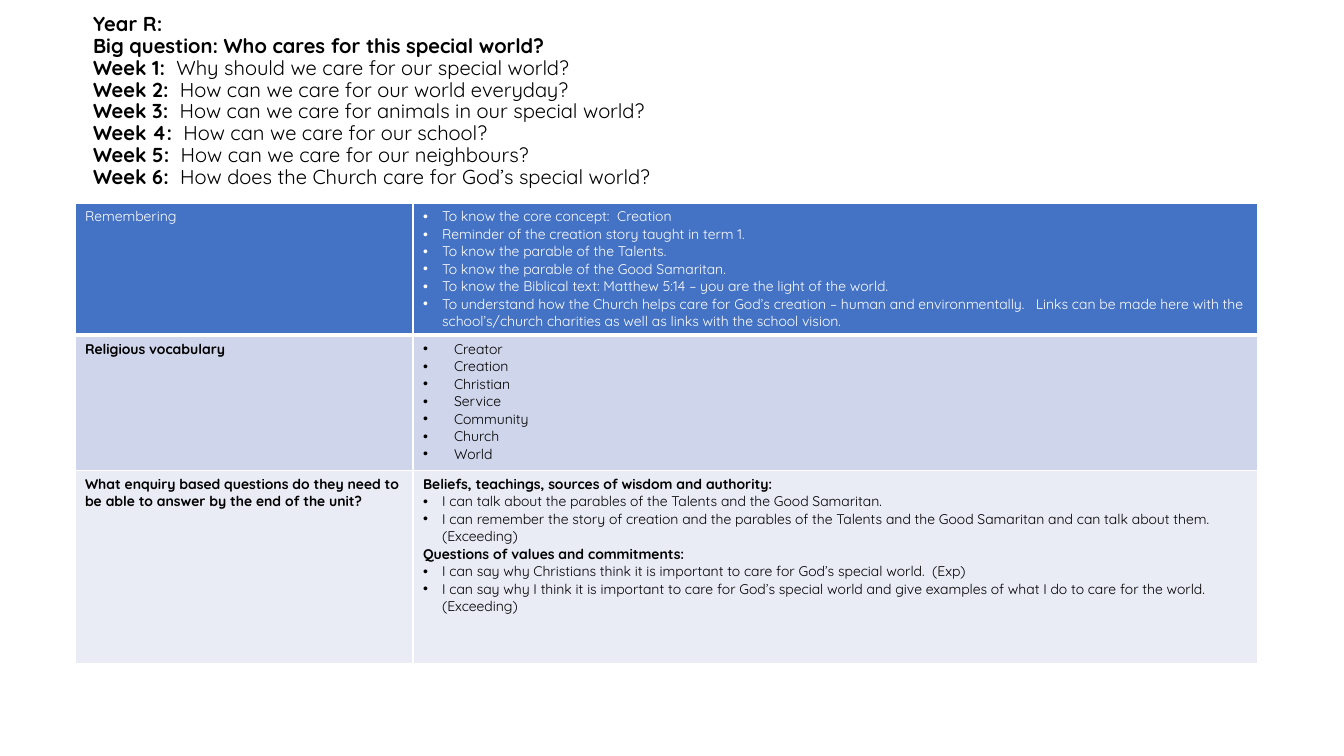
from pptx import Presentation
from pptx.dml.color import RGBColor as RGB
from pptx.enum.text import MSO_ANCHOR as ANCHOR, MSO_AUTO_SIZE as AUTO, PP_ALIGN as ALIGN
from pptx.oxml import parse_xml
from pptx.oxml.ns import nsdecls
from pptx.util import Pt

THEME = {
    "font": "Quicksand",
    "title_size": 14.4,
    "body_size": 10,
    "ink": "000000",
    "white": "FFFFFF",
    "row_fills": ["4472C4", "CFD5EA", "E9EBF5"],
}
EMU_PER_PX = 914400 / 100.8


def px(n):
    return round(n * EMU_PER_PX)


def style(r, size, color, bold):
    f = r.font
    f.name, f.size, f.bold = THEME["font"], Pt(size), bold
    f.color.rgb = RGB.from_string(color)


TITLE = [
    ("Year R:", ""),
    ("Big question: Who cares for this special world?", ""),
    ("Week 1:  ", "Why should we care for our special world?"),
    ("Week 2:  ", "How can we care for our world everyday?"),
    ("Week 3:  ", "How can we care for animals in our special world?"),
    ("Week 4:  ", "How can we care for our school?"),
    ("Week 5:  ", "How can we care for our neighbours?"),
    ("Week 6:  ", "How does the Church care for God’s special world?"),
]
HEADINGS = [
    "Beliefs, teachings, sources of wisdom and authority:",
    "Questions of values and commitments:",
]
ROWS = [
    ("Remembering", 132, 19, [
        "To know the core concept:  Creation",
        "Reminder of the creation story taught in term 1.",
        "To know the parable of the Talents.",
        "To know the parable of the Good Samaritan.",
        "To know the Biblical text: Matthew 5:14 – you are the light of the world.",
        "To understand how the Church helps care for God’s creation – human and "
        "environmentally.   Links can be made here with the school’s/church charities "
        "as well as links with the school vision.",
    ]),
    ("Religious vocabulary", 135, 31, [
        "Creator", "Creation", "Christian", "Service", "Community", "Church", "World",
    ]),
    ("What enquiry based questions do they need to be able to answer by the end of the unit?",
     193, 19, [
        HEADINGS[0],
        "I can talk about the parables of the Talents and the Good Samaritan.",
        "I can remember the story of creation and the parables of the Talents and the "
        "Good Samaritan and can talk about them.  (Exceeding)",
        HEADINGS[1],
        "I can say why Christians think it is important to care for God’s special world.  (Exp)",
        "I can say why I think it is important to care for God’s special world and give "
        "examples of what I do to care for the world. (Exceeding)",
    ]),
]
COLUMNS = [338, 845]

prs = Presentation()
prs.slide_width, prs.slide_height = px(1344), px(756)
s = prs.slides.add_slide(prs.slide_layouts[5])

title = s.shapes.title
title.left, title.top, title.width, title.height = px(83), px(9), px(1019), px(185)
tf = title.text_frame
tf.text = "\n".join(label + question for label, question in TITLE)
tf.word_wrap, tf.auto_size, tf.vertical_anchor = True, AUTO.NONE, ANCHOR.MIDDLE
for p, (label, question) in zip(tf.paragraphs, TITLE):
    p.alignment, p.line_spacing = ALIGN.LEFT, 0.9
    p.runs[0].text = label
    style(p.runs[0], THEME["title_size"], THEME["ink"], True)
    if question:
        r = p.add_run()
        r.text = question
        style(r, THEME["title_size"], THEME["ink"], False)

heights = [height for _, height, _, _ in ROWS]
table = s.shapes.add_table(len(ROWS), len(COLUMNS), px(75), px(203),
                           px(sum(COLUMNS)), px(sum(heights))).table
for column, width in zip(table.columns, COLUMNS):
    column.width = px(width)

for i, (topic, height, indent, points) in enumerate(ROWS):
    table.rows[i].height = px(height)
    color = THEME["ink"] if i else THEME["white"]
    for j, lines in enumerate([[topic], points]):
        cell = table.cell(i, j)
        tcPr = cell._tc.get_or_add_tcPr()
        for side in "LRTB":
            weight = 3 if (i, side) in ((0, "B"), (1, "T")) else 1
            tcPr.append(parse_xml(
                f'<a:ln{side} {nsdecls("a")} w="{Pt(weight)}"><a:solidFill>'
                f'<a:srgbClr val="{THEME["white"]}"/></a:solidFill></a:ln{side}>'))
        cell.fill.solid()
        cell.fill.fore_color.rgb = RGB.from_string(THEME["row_fills"][i])
        cell.text_frame.text = "\n".join(lines)
        for p, line in zip(cell.text_frame.paragraphs, lines):
            heading = line in HEADINGS
            style(p.runs[0], THEME["body_size"], color, heading or (j == 0 and i > 0))
            if j == 1 and not heading:
                pPr = p._p.get_or_add_pPr()
                pPr.set("marL", str(px(indent)))
                pPr.set("indent", str(-px(indent)))
                pPr.append(parse_xml(f'<a:buFont {nsdecls("a")} typeface="Arial"/>'))
                pPr.append(parse_xml(f'<a:buChar {nsdecls("a")} char="•"/>'))

prs.save("out.pptx")
